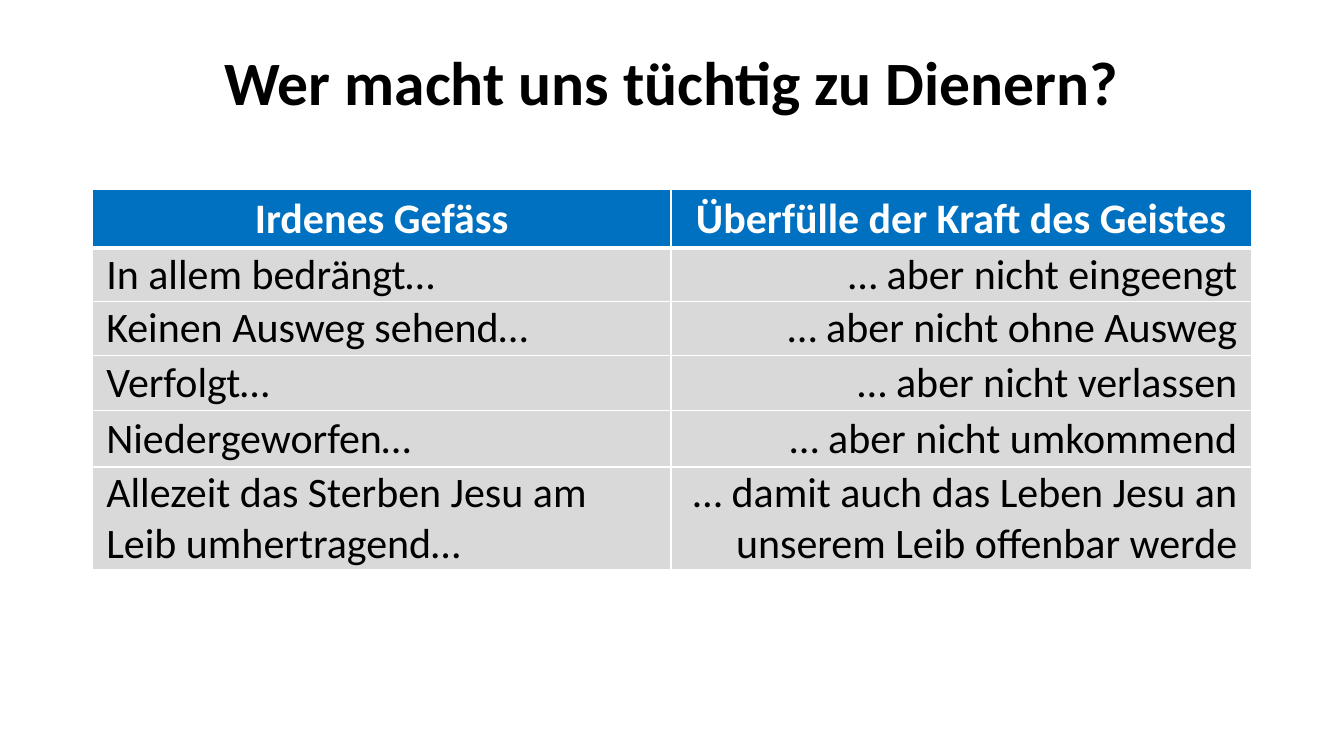
from lxml.etree import SubElement
from pptx import Presentation
from pptx.dml.color import RGBColor
from pptx.enum.text import MSO_ANCHOR, PP_ALIGN
from pptx.oxml.ns import qn
from pptx.util import Cm, Pt

BLACK = RGBColor(0x00, 0x00, 0x00)
WHITE = RGBColor(0xFF, 0xFF, 0xFF)
BLUE = RGBColor(0x00, 0x70, 0xC0)
GREY = RGBColor(0xD9, 0xD9, 0xD9)

TITLE = "Wer macht uns tüchtig zu Dienern?"
CONTRASTS = [
    ("Irdenes Gefäss", "Überfülle der Kraft des Geistes"),
    ("In allem bedrängt…", "… aber nicht eingeengt"),
    ("Keinen Ausweg sehend…", "… aber nicht ohne Ausweg"),
    ("Verfolgt…", "… aber nicht verlassen"),
    ("Niedergeworfen…", "… aber nicht umkommend"),
    ("Allezeit das Sterben Jesu am Leib umhertragend…",
     "… damit auch das Leben Jesu an unserem Leib offenbar werde"),
]
COLUMN_WIDTHS = (14.58, 14.63)
ROW_HEIGHTS = (1.47, 1.35, 1.35, 1.4, 1.42, 2.58)


def write_text(frame, text, *, size, color=BLACK, bold=False,
               align=PP_ALIGN.LEFT, font="Calibri", line_spacing=None):
    frame.word_wrap = True
    paragraph = frame.paragraphs[0]
    paragraph.alignment = align
    paragraph.line_spacing = line_spacing
    run = paragraph.add_run()
    run.text = text
    run.font.name = font
    run.font.size = Pt(size)
    run.font.bold = bold
    run.font.color.rgb = color


def set_borders(cell, color, **widths):
    """Draw the sides L, R, T and B, given in that order with widths in points."""
    properties = cell._tc.get_or_add_tcPr()
    for side, width in widths.items():
        line = SubElement(properties, qn(f"a:ln{side}"), w=str(Pt(width)))
        fill = SubElement(line, qn("a:solidFill"))
        SubElement(fill, qn("a:srgbClr"), val=str(color))


class SlideBuilder:
    """Holds the text sizes and the current slide."""

    title_size = 44
    table_size = 30

    def __init__(self, presentation):
        self.slide = presentation.slides.add_slide(presentation.slide_layouts[5])

    def title(self, text, left, top, width, height):
        shape = self.slide.shapes.title
        shape.left, shape.top = Cm(left), Cm(top)
        shape.width, shape.height = Cm(width), Cm(height)
        shape.text_frame.vertical_anchor = MSO_ANCHOR.MIDDLE
        write_text(shape.text_frame, text, size=self.title_size, bold=True,
                   align=PP_ALIGN.CENTER, line_spacing=0.9)

    def table(self, rows, left, top, column_widths, row_heights):
        table = self.slide.shapes.add_table(
            len(rows), len(column_widths), Cm(left), Cm(top),
            Cm(sum(column_widths)), Cm(sum(row_heights))).table
        for column, width in zip(table.columns, column_widths):
            column.width = Cm(width)
        for row, height in zip(table.rows, row_heights):
            row.height = Cm(height)
        for row_index, texts in enumerate(rows):
            for column_index, text in enumerate(texts):
                self.cell(table.cell(row_index, column_index), text,
                          row_index, column_index)

    def cell(self, cell, text, row_index, column_index):
        is_header = row_index == 0
        if is_header:
            align = PP_ALIGN.CENTER
        else:
            align = (PP_ALIGN.LEFT, PP_ALIGN.RIGHT)[column_index]
        cell.margin_left = cell.margin_right = Cm(0.35)
        cell.margin_top = cell.margin_bottom = 0
        cell.vertical_anchor = MSO_ANCHOR.MIDDLE
        set_borders(cell, WHITE, L=1, R=1, T=3 if row_index == 1 else 1,
                    B=3 if is_header else 1)
        cell.fill.solid()
        cell.fill.fore_color.rgb = BLUE if is_header else GREY
        write_text(cell.text_frame, text, size=self.table_size, bold=is_header,
                   color=WHITE if is_header else BLACK, align=align)


def main():
    presentation = Presentation()
    presentation.slide_width, presentation.slide_height = Cm(33.87), Cm(19.05)
    builder = SlideBuilder(presentation)
    builder.title(TITLE, 2.33, 1.02, 29.21, 2.26)
    builder.table(CONTRASTS, 2.33, 4.78, COLUMN_WIDTHS, ROW_HEIGHTS)
    presentation.save("out.pptx")


if __name__ == "__main__":
    main()
